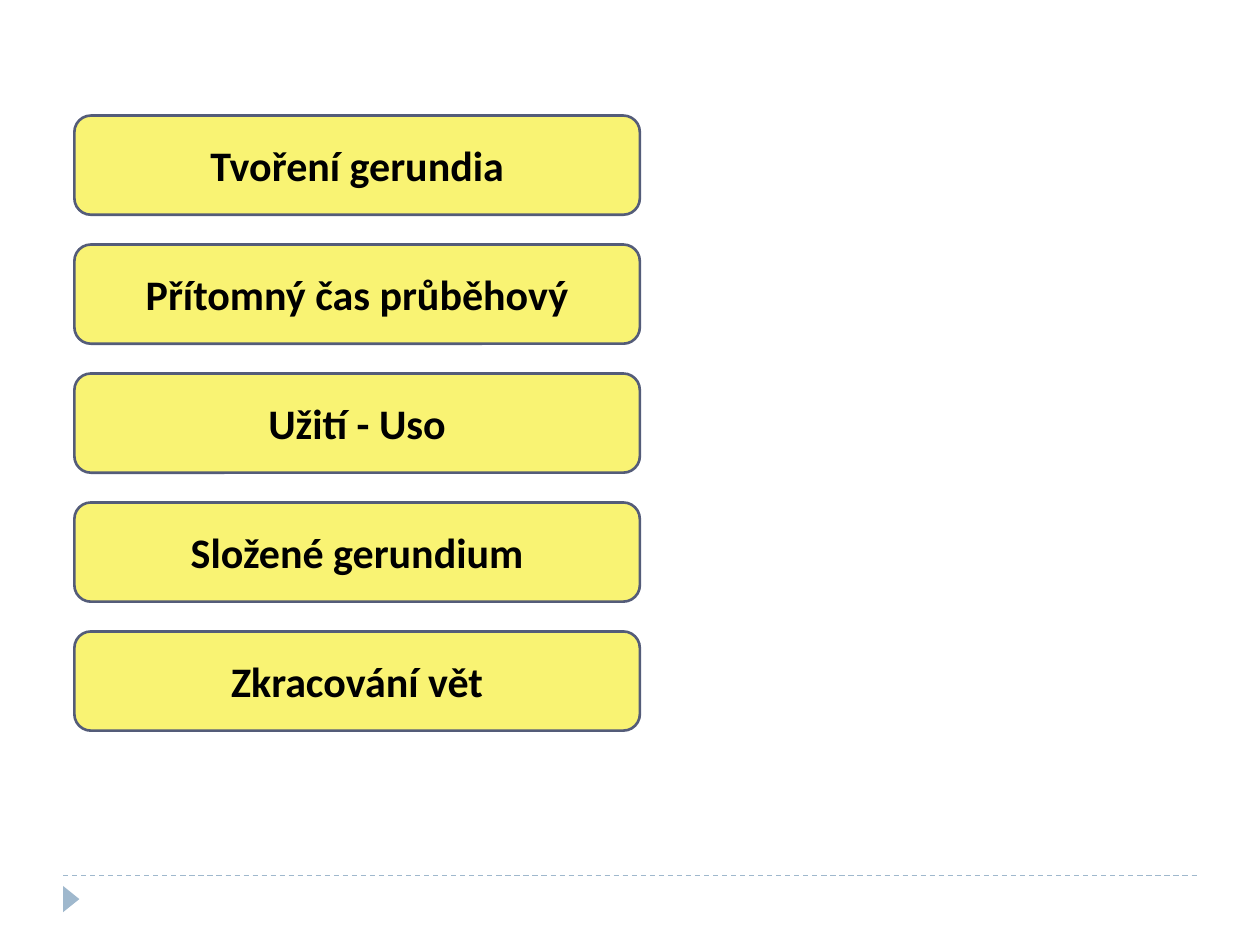
from dataclasses import dataclass

from lxml import etree
from pptx import Presentation
from pptx import util as u
from pptx.dml.color import RGBColor
from pptx.enum import dml, shapes, text
from pptx.oxml.ns import qn

COLORS = {
    "topic": "F9F373",
    "border": "545C79",
    "text": "000000",
    "accent": "9FB8CD",
}
LEFT, TOP, WIDTH, HEIGHT, PITCH = 1.5, 2.33, 11.4, 2.0, 2.6


@dataclass
class Topic:
    label: str
    row: int


TOPICS = [
    Topic(label, row)
    for row, label in enumerate([
        "Tvoření gerundia",
        "Přítomný čas průběhový",
        "Užití - Uso",
        "Složené gerundium",
        "Zkracování vět",
    ])
]


def rgb(name: str) -> RGBColor:
    return RGBColor.from_string(COLORS[name])


def draw_footer(s) -> None:
    line = s.shapes.add_connector(
        shapes.MSO_CONNECTOR.STRAIGHT,
        u.Cm(1.27), u.Cm(17.65), u.Cm(24.13), u.Cm(17.65),
    )
    line.line.color.rgb = rgb("accent")
    line.line.width = u.Pt(0.75)
    line.line.dash_style = dml.MSO_LINE.DASH
    etree.SubElement(line._element.spPr, qn("a:effectLst"))

    sp = s.shapes.add_shape(
        shapes.MSO_SHAPE.ISOSCELES_TRIANGLE,
        u.Cm(1.17), u.Cm(17.96), u.Cm(0.53), u.Cm(0.33),
    )
    sp.rotation = 90
    sp.shadow.inherit = False
    sp.fill.solid()
    sp.fill.fore_color.rgb = rgb("accent")
    sp.line.fill.background()


def draw_topic(s, topic: Topic) -> None:
    sp = s.shapes.add_shape(
        shapes.MSO_SHAPE.ROUNDED_RECTANGLE,
        u.Cm(LEFT), u.Cm(TOP + topic.row * PITCH), u.Cm(WIDTH), u.Cm(HEIGHT),
    )
    sp.shadow.inherit = False
    sp.fill.solid()
    sp.fill.fore_color.rgb = rgb("topic")
    sp.line.color.rgb = rgb("border")
    sp.line.width = u.Pt(1.5)
    tf = sp.text_frame
    tf.word_wrap = True
    tf.vertical_anchor = text.MSO_ANCHOR.MIDDLE
    p = tf.paragraphs[0]
    p.alignment = text.PP_ALIGN.CENTER
    r = p.add_run()
    r.text = topic.label
    r.font.name = "Calibri"
    r.font.size = u.Pt(24)
    r.font.bold = True
    r.font.color.rgb = rgb("text")


def main() -> None:
    prs = Presentation()
    prs.slide_width, prs.slide_height = u.Cm(25.4), u.Cm(19.05)
    s = prs.slides.add_slide(prs.slide_layouts[6])
    draw_footer(s)
    for topic in TOPICS:
        draw_topic(s, topic)
    prs.save("out.pptx")


if __name__ == "__main__":
    main()
